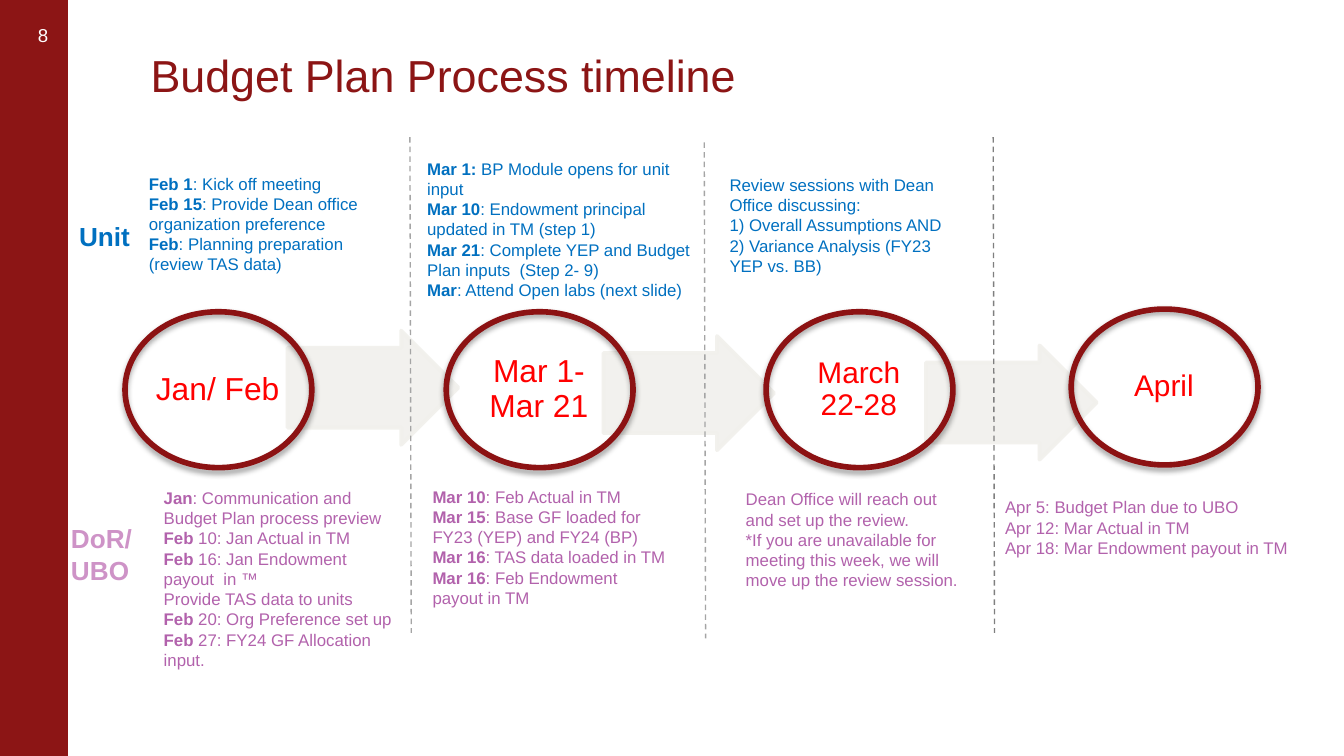
from dataclasses import dataclass

from lxml import etree
from pptx import Presentation
from pptx.dml.color import RGBColor
from pptx.enum.dml import MSO_LINE
from pptx.enum.shapes import MSO_CONNECTOR, MSO_SHAPE
from pptx.enum.text import MSO_ANCHOR, MSO_AUTO_SIZE, PP_ALIGN
from pptx.oxml.ns import qn
from pptx.util import Inches, Pt

RECT, OVAL, ARROW = MSO_SHAPE.RECTANGLE, MSO_SHAPE.OVAL, MSO_SHAPE.RIGHT_ARROW
STRAIGHT, DASH = MSO_CONNECTOR.STRAIGHT, MSO_LINE.DASH
TOP, MIDDLE, BOTTOM = MSO_ANCHOR.TOP, MSO_ANCHOR.MIDDLE, MSO_ANCHOR.BOTTOM
LEFT, CENTER = PP_ALIGN.LEFT, PP_ALIGN.CENTER
GROW, FIXED = MSO_AUTO_SIZE.SHAPE_TO_FIT_TEXT, MSO_AUTO_SIZE.NONE


@dataclass(frozen=True)
class Theme:
    face: str = "Arial"
    bar: str = "8C1515"
    ring: str = "8C1213"
    arrow: str = "F1F0EC"
    date: str = "FF0000"
    unit: str = "0070C0"
    office: str = "B262AC"
    label: str = "CE93C7"
    white: str = "FFFFFF"
    rule: str = "A5A5A5"
    dark: str = "7F7F7F"
    title: int = 24
    head: int = 14
    page: int = 10
    note: int = 9


THEME = Theme()
WIDE = 10
HIGH = WIDE * 9 / 16
INSETS = (0.1, 0.05, 0.1, 0.05)

UNIT_NOTES = [
    (1.01, 1.24, 2.06, 0.86, [
        "Feb 1|: Kick off meeting",
        "Feb 15|: Provide Dean office organization preference",
        "Feb|: Planning preparation (review TAS data)"]),
    (3.08, 1.13, 2.17, 1.16, [
        "Mar 1: |BP Module opens for unit input",
        "Mar 10|: Endowment principal updated in TM (step 1)",
        "Mar 21|: Complete YEP and Budget Plan inputs  (Step 2- 9)",
        "Mar|: Attend Open labs (next slide)"]),
    (5.33, 1.25, 1.93, 0.86, [
        "|Review sessions with Dean Office discussing:",
        "|1) Overall Assumptions AND",
        "|2) Variance Analysis (FY23 YEP vs. BB)"]),
]
OFFICE_NOTES = [
    (1.12, 3.58, 1.9, 1.62, [
        "Jan|: Communication and Budget Plan process preview",
        "Feb| 10: Jan Actual in TM",
        "Feb| 16: Jan Endowment payout  in ™\nProvide TAS data to units",
        "Feb| 20: Org Preference set up",
        "Feb| 27: FY24 GF Allocation input."]),
    (3.12, 3.57, 1.93, 1.16, [
        "Mar 10|: Feb Actual in TM",
        "Mar 15|: Base GF loaded for FY23 (YEP) and FY24 (BP)",
        "Mar 16|: TAS data loaded in TM",
        "Mar 16|: Feb Endowment payout in TM"]),
    (5.45, 3.59, 1.82, 0.86, [
        "|Dean Office will reach out and set up the review.",
        "|*If you are unavailable for meeting this week, we will "
        "move up the review session."]),
    (7.38, 3.65, 2.33, 0.56, [
        "|Apr 5: Budget Plan due to UBO",
        "|Apr 12: Mar Actual in TM",
        "|Apr 18: Mar Endowment payout in TM"]),
]
LABELS = [
    (0.49, 1.59, 0.65, 0.34, ["Unit|"], THEME.unit),
    (0.43, 3.84, 0.84, 0.57, ["DoR/|", "UBO|"], THEME.label),
]
STAGES = [
    (0.93, 2.32, "Jan/ Feb", 17),
    (3.32, 2.32, "Mar 1- Mar 21", 17),
    (5.7, 2.32, "March 22-28", 16),
    (7.97, 2.3, "April", 16),
]
ARROWS = [(4.49, 2.5), (6.89, 2.57), (2.14, 2.46)]
RULES = [(3.05, 1.02, THEME.rule), (5.24, 1.06, THEME.rule),
         (7.39, 1.02, THEME.dark)]


def apply(item, values):
    for name, value in values.items():
        setattr(item, name, value)


def rgb(color):
    return RGBColor.from_string(color)


def set_frame(frame, insets, anchor, grow=FIXED):
    left, top, right, bottom = map(Inches, insets)
    apply(frame, {"word_wrap": True, "auto_size": grow,
                  "vertical_anchor": anchor, "margin_left": left,
                  "margin_top": top, "margin_right": right,
                  "margin_bottom": bottom})


def add_run(para, text, size, color, bold=False):
    run = para.add_run()
    run.text = text
    apply(run.font, {"name": THEME.face, "size": Pt(size), "bold": bold})
    run.font.color.rgb = rgb(color)


def add_text(slide, box, lines, size, color, insets=INSETS, anchor=TOP,
             align=LEFT, space=1.0, grow=FIXED):
    frame = slide.shapes.add_textbox(*map(Inches, box)).text_frame
    set_frame(frame, insets, anchor, grow)
    for i, line in enumerate(lines):
        para = frame.add_paragraph() if i else frame.paragraphs[0]
        apply(para, {"alignment": align, "line_spacing": space})
        strong, plain = line.split("|")
        if strong:
            add_run(para, strong, size, color, True)
        for j, part in enumerate(plain.split("\n")):
            if j:
                para.add_line_break()
            if part:
                add_run(para, part, size, color)


def add_shape(slide, kind, box, fill, line, width):
    shape = slide.shapes.add_shape(kind, *map(Inches, box))
    shape.shadow.inherit = False
    if fill:
        shape.fill.solid()
        shape.fill.fore_color.rgb = rgb(fill)
    else:
        shape.fill.background()
    shape.line.color.rgb = rgb(line)
    shape.line.width = Pt(width)
    return shape


def set_alpha(node, share):
    etree.SubElement(node, qn("a:alpha")).set("val", str(share * 1000))


def add_arrow(slide, left, top):
    shape = add_shape(slide, ARROW, (left, top, 1.27, 0.85),
                      THEME.arrow, THEME.arrow, 2)
    shape.adjustments[0] = 0.7
    shape.adjustments[1] = 0.5
    for node in shape.element.spPr.iter(qn("a:srgbClr")):
        set_alpha(node, 89)


def add_stage(slide, left, top, text, size):
    ring = add_shape(slide, OVAL, (left, top, 1.39, 1.16),
                     None, THEME.ring, 3)
    effects = ring.element.spPr.find(qn("a:effectLst"))
    shade = etree.SubElement(effects, qn("a:outerShdw"))
    for name, value in {"blurRad": Pt(3.1), "dist": Pt(1.6),
                        "dir": 90 * 60000, "rotWithShape": 0}.items():
        shade.set(name, str(int(value)))
    color = etree.SubElement(shade, qn("a:srgbClr"))
    color.set("val", "000000")
    set_alpha(color, 37)
    add_text(slide, (left + 0.2, top + 0.17, 0.98, 0.82), ["|" + text], size,
             THEME.date, (0.01,) * 4, MIDDLE, CENTER, 0.9)


def add_rule(slide, left, top, color):
    ends = (left, top, left + 0.01, top + 3.69)
    rule = slide.shapes.add_connector(STRAIGHT, *map(Inches, ends))
    rule.line.color.rgb = rgb(color)
    apply(rule.line, {"width": Pt(0.75), "dash_style": DASH})
    etree.SubElement(rule.element.spPr, qn("a:effectLst"))


def set_title(slide, text):
    title = slide.shapes.title
    apply(title, {"left": Inches(1.12), "top": Inches(0.28),
                  "width": Inches(8.43), "height": Inches(0.53)})
    set_frame(title.text_frame, (0, 0.05, 0.1, 0.05), BOTTOM)
    para = title.text_frame.paragraphs[0]
    apply(para, {"alignment": LEFT, "line_spacing": 0.85})
    add_run(para, text, THEME.title, THEME.bar)


def main():
    deck = Presentation()
    apply(deck, {"slide_width": Inches(WIDE), "slide_height": Inches(HIGH)})
    slide = deck.slides.add_slide(deck.slide_layouts[5])
    set_title(slide, "Budget Plan Process timeline")
    add_shape(slide, RECT, (0, 0, 0.5, HIGH), THEME.bar, THEME.bar, 0.75)
    add_text(slide, (0.07, 0.01, 0.5, 0.5), ["|8"], THEME.page, THEME.white,
             (0.05, 0, 0.05, 0), MIDDLE, CENTER)
    for arrow in ARROWS:
        add_arrow(slide, *arrow)
    for stage in STAGES:
        add_stage(slide, *stage)
    for rule in RULES:
        add_rule(slide, *rule)
    for notes, color in ((UNIT_NOTES, THEME.unit),
                         (OFFICE_NOTES, THEME.office)):
        for *box, lines in notes:
            add_text(slide, box, lines, THEME.note, color, grow=GROW)
    for *box, lines, color in LABELS:
        add_text(slide, box, lines, THEME.head, color, grow=GROW)
    deck.save("out.pptx")


if __name__ == "__main__":
    main()
